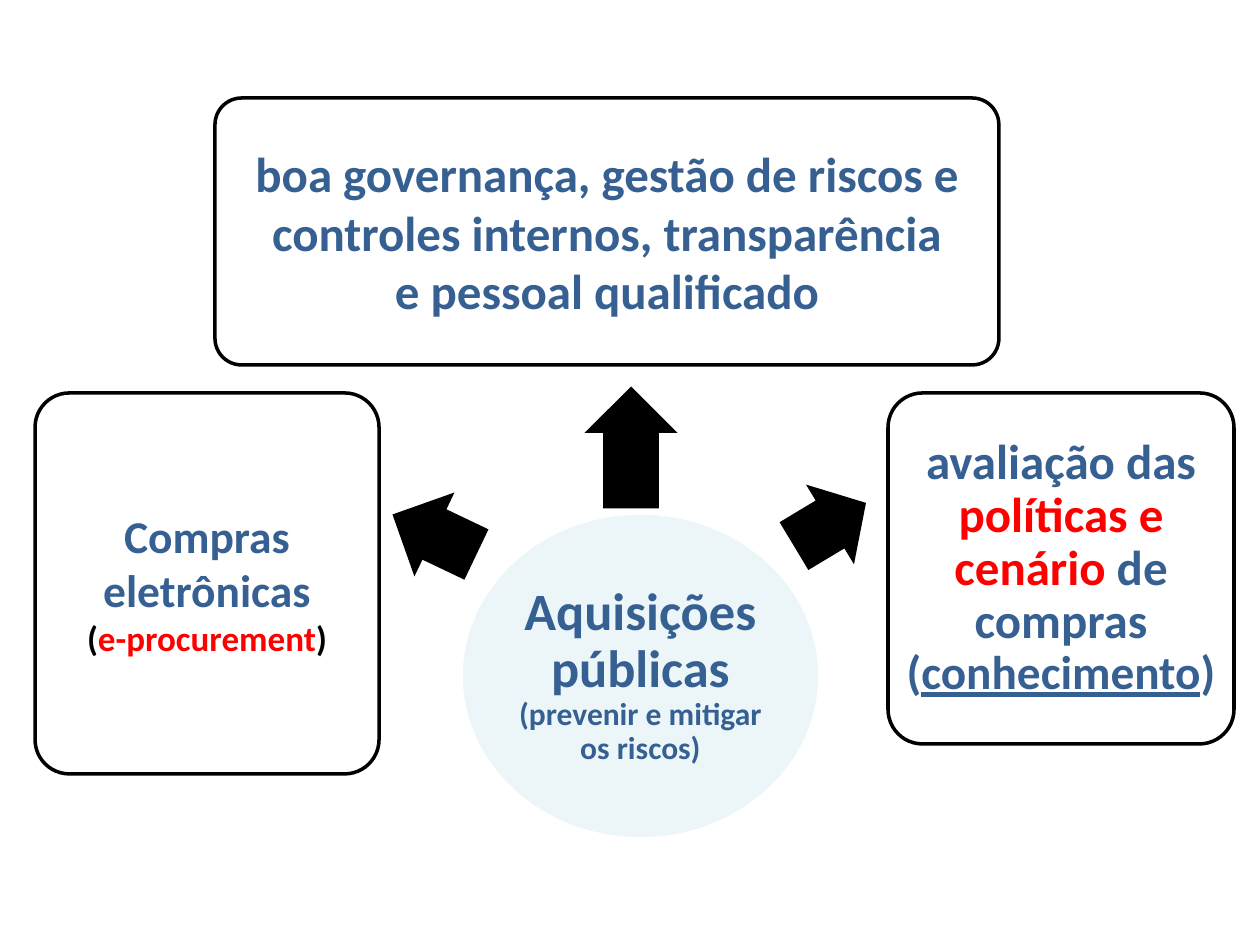
import pptx
import pptx.dml.color
import pptx.enum.shapes
import pptx.enum.text
import pptx.oxml
import pptx.oxml.ns
import pptx.util

PX = 914400 / 126
BLUE, RED, BLACK, WHITE = "376092", "FF0000", "000000", "FFFFFF"
SHAPE = pptx.enum.shapes.MSO_SHAPE

prs = pptx.Presentation()
prs.slide_width, prs.slide_height = round(1260 * PX), round(945 * PX)
s = prs.slides.add_slide(prs.slide_layouts[6])


def add(kind, box, fill, line=None, adj=()):
    """Add a preset shape; box is left, top, width, height in px."""
    sp = s.shapes.add_shape(kind, *[round(v * PX) for v in box])
    sp.shadow.inherit = False
    for i, v in enumerate(adj):
        sp.adjustments[i] = v
    sp.fill.solid()
    sp.fill.fore_color.rgb = pptx.dml.color.RGBColor.from_string(fill)
    if line:
        sp.line.color.rgb = pptx.dml.color.RGBColor.from_string(line)
        sp.line.width = pptx.util.Pt(2)
    else:
        sp.line.fill.background()
    return sp


def write(sp, paragraphs, inset=7, spacing=1.0):
    """Fill sp with paragraphs, each a list of (text, size, colour, underline)."""
    tf = sp.text_frame
    tf.word_wrap = True
    tf.vertical_anchor = pptx.enum.text.MSO_ANCHOR.MIDDLE
    tf.margin_left = tf.margin_right = round(inset * PX)
    tf.margin_top = tf.margin_bottom = round(inset * PX)
    for i, runs in enumerate(paragraphs):
        p = tf.add_paragraph() if i else tf.paragraphs[0]
        p.alignment = pptx.enum.text.PP_ALIGN.CENTER
        p.line_spacing = spacing
        for text, size, color, *underline in runs:
            r = p.add_run()
            r.text = text
            r.font.name = "Calibri"
            r.font.size = pptx.util.Pt(size)
            r.font.bold = True
            r.font.color.rgb = pptx.dml.color.RGBColor.from_string(color)
            if underline:
                r.font.underline = underline[0]


# Central theme
center = add(SHAPE.OVAL, (461, 513, 359, 326), "DBEEF4", WHITE)
clr = center.fill._xPr.find(".//" + pptx.oxml.ns.qn("a:srgbClr"))
clr.append(pptx.oxml.parse_xml(
    "<a:alpha %s val='52000'/>" % pptx.oxml.ns.nsdecls("a")))
write(center, [[("Aquisições públicas ", 30, BLUE),
                ("(prevenir e mitigar os riscos)", 18, BLUE)]],
      inset=3, spacing=0.9)

# Arrows from the theme to the three boxes
for box, angle in [((388, 488, 93, 93), 25.5),
                   ((570, 401, 122, 93), 90),
                   ((788, 478, 84, 93), 149)]:
    arrow = add(SHAPE.LEFT_ARROW, box, BLACK, adj=(0.6, 0.5))
    arrow.rotation = angle

# Boxes: place, line spacing, paragraphs
boxes = [
    ((35, 393, 344, 381), 1.0,
     [[("Compras eletrônicas", 26, BLUE)],
      [("(", 20, BLACK), ("e-procurement", 20, RED), (")", 20, BLACK)]]),
    ((215, 98, 784, 267), 1.0,
     [[("boa governança, gestão de riscos e controles internos, transparência",
        28, BLUE)],
      [("e pessoal qualificado", 28, BLUE)]]),
    ((888, 393, 346, 351), 0.9,
     [[("avaliação das ", 28, BLUE), ("políticas e cenário ", 28, RED),
       ("de compras ", 28, BLUE), ("(", 27, BLUE),
       ("conhecimento", 27, BLUE, True), (")", 27, BLUE)]]),
]
for box, spacing, paragraphs in boxes:
    sp = add(SHAPE.ROUNDED_RECTANGLE, box, WHITE, BLACK, adj=(0.1,))
    write(sp, paragraphs, spacing=spacing)

prs.save("out.pptx")
